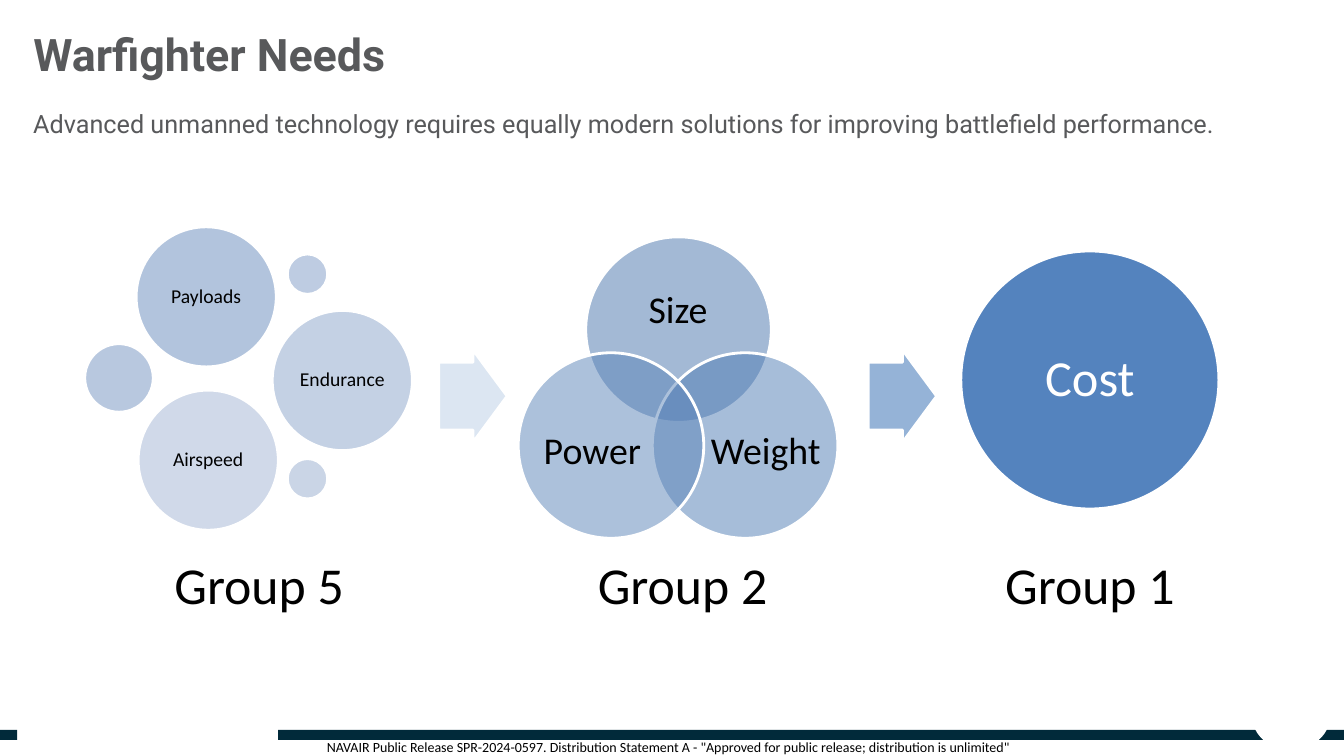
from dataclasses import dataclass

from lxml import etree
from pptx import Presentation
from pptx.dml.color import RGBColor
from pptx.enum.shapes import MSO_SHAPE
from pptx.enum.text import MSO_ANCHOR, PP_ALIGN
from pptx.oxml.ns import qn
from pptx.util import Inches, Pt

ELLIPSE, ARROW, RECTANGLE = MSO_SHAPE.OVAL, MSO_SHAPE.RIGHT_ARROW, MSO_SHAPE.RECTANGLE
LEFT, CENTER = PP_ALIGN.LEFT, PP_ALIGN.CENTER
TOP, MIDDLE = MSO_ANCHOR.TOP, MSO_ANCHOR.MIDDLE


@dataclass(frozen=True)
class Theme:
    heading_font: str = "Roboto"
    diagram_font: str = "Calibri"
    black: str = "000000"
    white: str = "FFFFFF"
    grey: str = "58595B"
    navy: str = "012A3A"
    cost_blue: str = "5483BE"
    arrow_blues: tuple = ("DCE6F2", "95B3D7")
    venn_blues: tuple = ("4875AC", "4F7CB4", "5B84B9")
    bubble_blues: tuple = ("678BBD", "7393C1", "7F9BC6", "8BA4CA", "96ACCF", "A2B4D4")
    title_size: float = 32
    subtitle_size: float = 18
    group_size: float = 37
    cost_size: float = 36
    venn_size: float = 27
    bubble_size: float = 14
    release_size: float = 10
    outline: float = 2


class SlideBuilder:
    def __init__(self, slide, theme):
        self.shapes = slide.shapes
        self.theme = theme

    def shape(self, kind, box, fill, outlined=True, opacity=100):
        shape = self.shapes.add_shape(kind, *map(Inches, box))
        shape.shadow.inherit = False
        shape.fill.solid()
        shape.fill.fore_color.rgb = RGBColor.from_string(fill)
        if opacity < 100:
            color = shape.element.spPr.find(qn("a:solidFill")).find(qn("a:srgbClr"))
            etree.SubElement(color, qn("a:alpha"), val=str(opacity * 1000))
        if outlined:
            shape.line.color.rgb = RGBColor.from_string(self.theme.white)
            shape.line.width = Pt(self.theme.outline)
        else:
            shape.line.fill.background()
        return shape

    def circle(self, left, top, diameter, fill, opacity=50):
        return self.shape(ELLIPSE, (left, top, diameter, diameter), fill, opacity=opacity)

    def arrow(self, left, top, fill):
        arrow = self.shape(ARROW, (left, top, 0.68, 0.92), fill)
        arrow.adjustments[0] = 0.73
        arrow.adjustments[1] = 0.5

    def set_words(self, shape, words, size, color=None, font=None, bold=False,
                  align=CENTER, anchor=MIDDLE, inset=0, spacing=0.9):
        """Put one styled paragraph into a shape or text box."""
        frame = shape.text_frame
        frame.text = words
        frame.word_wrap = True
        frame.vertical_anchor = anchor
        frame.margin_left = frame.margin_right = Inches(inset)
        frame.margin_top = frame.margin_bottom = Inches(inset)
        paragraph = frame.paragraphs[0]
        paragraph.alignment = align
        paragraph.line_spacing = spacing
        style = paragraph.runs[0].font
        style.name = font or self.theme.diagram_font
        style.size = Pt(size)
        style.bold = bold
        style.color.rgb = RGBColor.from_string(color or self.theme.black)

    def label(self, box, words, size, **style):
        self.set_words(self.shapes.add_textbox(*map(Inches, box)), words, size, **style)

    def heading(self, box, words, size, bold=False):
        self.label(box, words, size, color=self.theme.grey, font=self.theme.heading_font,
                   bold=bold, align=LEFT, anchor=TOP, spacing=1.0)


def add_footer(builder, theme):
    for left, width in ((0, 0.17), (2.76, 10.57)):
        builder.shape(RECTANGLE, (left, 7.24, width, 0.1), theme.navy, outlined=False)
    builder.shape(ELLIPSE, (12.42, 6.78, 0.77, 0.66), theme.white, outlined=False)
    builder.label((-0.08, 7.28, 13.41, 0.27),
                  "NAVAIR Public Release SPR-2024-0597. Distribution Statement A - "
                  "\"Approved for public release; distribution is unlimited\"",
                  theme.release_size, anchor=TOP, inset=0.05, spacing=1.0)


def add_venn(builder, theme):
    rings = (
        (5.81, 2.35, "Size", (6.05, 2.67, 1.35, 0.83)),
        (6.47, 3.5, "Weight", (7.04, 3.98, 1.11, 1.01)),
        (5.14, 3.5, "Power", (5.32, 3.98, 1.11, 1.01)),
    )
    for (left, top, need, label_box), blue in zip(rings, theme.venn_blues):
        builder.circle(left, top, 1.84, blue)
        builder.label(label_box, need, theme.venn_size)


def add_bubbles(builder, theme):
    bubbles = (
        (1.35, 2.25, 1.39, "Payloads"),
        (0.84, 3.41, 0.68, None),
        (2.85, 2.52, 0.4, None),
        (2.7, 3.08, 1.39, "Endurance"),
        (2.85, 4.55, 0.4, None),
        (1.37, 3.87, 1.39, "Airspeed"),
    )
    for (left, top, diameter, need), blue in zip(bubbles, theme.bubble_blues):
        bubble = builder.circle(left, top, diameter, blue)
        if need:
            builder.set_words(bubble, need, theme.bubble_size)


def main():
    theme = Theme()
    presentation = Presentation()
    presentation.slide_width = Inches(13.33)
    presentation.slide_height = Inches(7.5)
    slide = presentation.slides.add_slide(presentation.slide_layouts[6])
    builder = SlideBuilder(slide, theme)

    add_footer(builder, theme)
    for left, group in ((0.91, "Group 5"), (5.11, "Group 2"), (9.15, "Group 1")):
        builder.label((left, 5.39, 3.32, 0.88), group, theme.group_size, inset=0.15)
    add_venn(builder, theme)
    add_bubbles(builder, theme)
    cost = builder.circle(9.53, 2.49, 2.56, theme.cost_blue, opacity=100)
    builder.set_words(cost, "Cost", theme.cost_size, color=theme.white)

    builder.heading((0.33, 0.27, 12.51, 0.54), "Warfighter Needs", theme.title_size, bold=True)
    builder.heading((0.33, 1.07, 11.87, 0.3),
                    "Advanced unmanned technology requires equally modern solutions "
                    "for improving battlefield performance.", theme.subtitle_size)
    for left, blue in zip((4.35, 8.61), theme.arrow_blues):
        builder.arrow(left, 3.47, blue)

    presentation.save("out.pptx")


if __name__ == "__main__":
    main()
